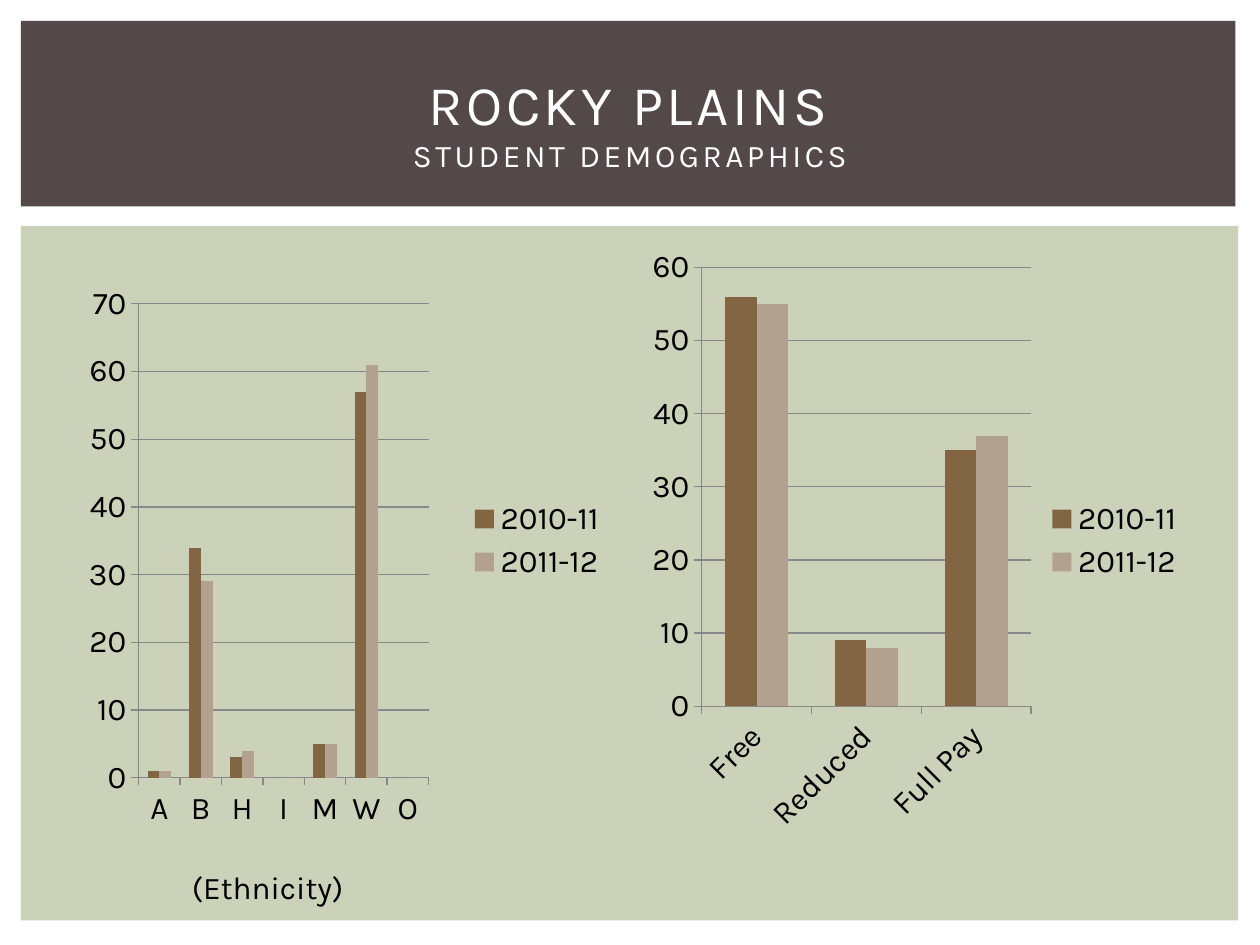
from lxml.etree import SubElement
from pptx import Presentation
from pptx.chart.data import CategoryChartData
from pptx.dml.color import RGBColor
from pptx.enum.chart import XL_CHART_TYPE, XL_LEGEND_POSITION, XL_TICK_MARK
from pptx.enum.shapes import MSO_SHAPE
from pptx.enum.text import MSO_ANCHOR, PP_ALIGN
from pptx.oxml.ns import qn
from pptx.util import Pt

FONT = "Karla"
SAGE = RGBColor(0xCC, 0xD1, 0xB9)
UMBER = RGBColor(0x53, 0x49, 0x49)
BROWN = RGBColor(0x82, 0x66, 0x43)
TAUPE = RGBColor(0xB2, 0xA1, 0x8F)
GRAY = RGBColor(0x88, 0x88, 0x88)
BLACK = RGBColor(0, 0, 0)
WHITE = RGBColor(0xFF, 0xFF, 0xFF)
YEARS = ("2010-11", "2011-12")


def add_panel(page, left, top, width, height, color):
    panel = page.shapes.add_shape(
        MSO_SHAPE.RECTANGLE, Pt(left), Pt(top), Pt(width), Pt(height))
    panel.shadow.inherit = False
    panel.fill.solid()
    panel.fill.fore_color.rgb = color
    panel.line.fill.background()


def add_text(page, left, top, width, height, lines, color, spacing=0):
    box = page.shapes.add_textbox(Pt(left), Pt(top), Pt(width), Pt(height))
    frame = box.text_frame
    frame.word_wrap = True
    frame.vertical_anchor = MSO_ANCHOR.MIDDLE
    para = frame.paragraphs[0]
    para.alignment = PP_ALIGN.CENTER
    for number, (text, size) in enumerate(lines):
        if number:
            para.add_line_break()
        span = para.add_run()
        span.text = text
        span.font.name = FONT
        span.font.size = Pt(size)
        span.font.color.rgb = color
        if spacing:
            span.font._element.set("spc", str(spacing * 100))


def set_plot_area(chart, left, top, width, height):
    plot_area = chart._chartSpace.chart.plotArea
    for old in plot_area.findall(qn("c:layout")):
        plot_area.remove(old)
    layout = SubElement(plot_area, qn("c:layout"))
    plot_area.insert(0, layout)
    manual = SubElement(layout, qn("c:manualLayout"))
    settings = (("layoutTarget", "inner"), ("xMode", "edge"), ("yMode", "edge"),
                ("x", left), ("y", top), ("w", width), ("h", height))
    for name, value in settings:
        SubElement(manual, qn(f"c:{name}")).set("val", str(value))


def style_line(line):
    line.color.rgb = GRAY
    line.width = Pt(0.75)


def add_columns(page, left, categories, values, maximum, plot_area, angle=0):
    data = CategoryChartData()
    data.categories = categories
    for year, numbers in zip(YEARS, values):
        data.add_series(year, numbers)
    chart = page.shapes.add_chart(
        XL_CHART_TYPE.COLUMN_CLUSTERED,
        Pt(left), Pt(135.4), Pt(318), Pt(347), data).chart
    chart.has_title = False
    chart.font.name = FONT
    chart.font.size = Pt(18)
    chart.font.color.rgb = BLACK
    chart.has_legend = True
    chart.legend.position = XL_LEGEND_POSITION.RIGHT
    chart.legend.include_in_layout = False
    set_plot_area(chart, *plot_area)

    plot = chart.plots[0]
    plot.gap_width = 150
    plot.overlap = 0
    plot.vary_by_categories = False
    for series, color in zip(plot.series, (BROWN, TAUPE)):
        series.format.fill.solid()
        series.format.fill.fore_color.rgb = color

    for axis in (chart.category_axis, chart.value_axis):
        axis.major_tick_mark = XL_TICK_MARK.OUTSIDE
        axis.minor_tick_mark = XL_TICK_MARK.NONE
        axis.tick_labels.font.size = Pt(18)
        style_line(axis.format.line)
    chart.value_axis.minimum_scale = 0
    chart.value_axis.maximum_scale = maximum
    chart.value_axis.major_unit = 10
    chart.value_axis.has_major_gridlines = True
    style_line(chart.value_axis.major_gridlines.format.line)
    if angle:
        body = chart.category_axis._element.find(qn("c:txPr")).find(qn("a:bodyPr"))
        body.set("rot", str(angle * 60000))


def main():
    deck = Presentation()
    deck.slide_width, deck.slide_height = Pt(720), Pt(540)
    page = deck.slides.add_slide(deck.slide_layouts[6])
    add_panel(page, 12, 129, 695.5, 397, SAGE)
    add_panel(page, 12, 12, 694, 106, UMBER)
    add_columns(page, 36, list("ABHIMWO"),
                ((1, 34, 3, 0, 5, 57, 0), (1, 29, 4, 0, 5, 61, 0)),
                70, (0.136, 0.11, 0.521, 0.781))
    add_columns(page, 366, ("Free", "Reduced", "Full Pay"),
                ((56, 9, 35), (55, 8, 37)),
                60, (0.11, 0.05, 0.592, 0.723), angle=-45)
    add_text(page, 30, 28, 660, 83,
             (("ROCKY PLAINS", 32), ("STUDENT DEMOGRAPHICS", 18)), WHITE, spacing=2)
    add_text(page, 48, 492, 210, 29, (("(Ethnicity)", 18),), BLACK)
    deck.save("out.pptx")


if __name__ == "__main__":
    main()
